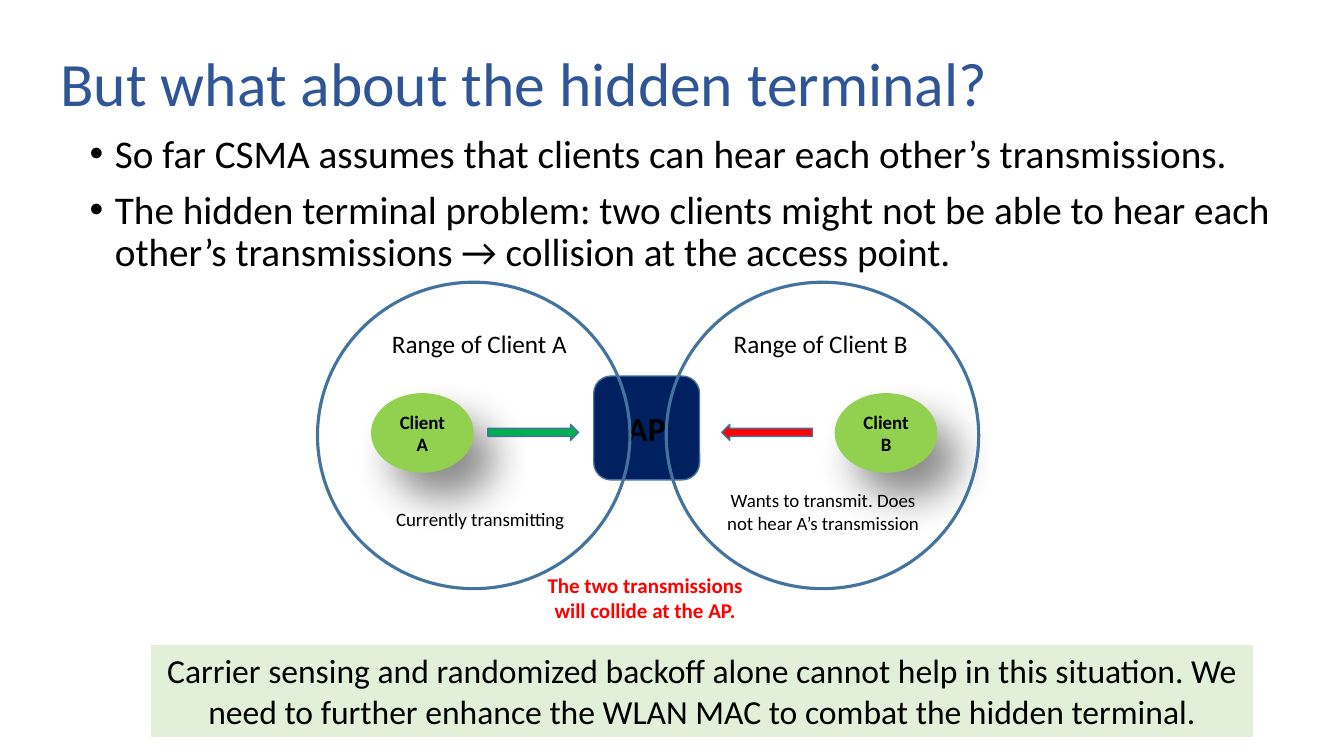
from math import atan2, degrees, hypot

from lxml.etree import SubElement
from pptx import Presentation
from pptx.dml.color import RGBColor
from pptx.enum.shapes import MSO_SHAPE as SHAPE
from pptx.enum.text import MSO_ANCHOR as ANCHOR, MSO_AUTO_SIZE as AUTOSIZE, PP_ALIGN as ALIGN
from pptx.oxml.ns import qn
from pptx.util import Pt

# Content: places are (left, top, width, height) in points
TITLE = "But what about the hidden terminal?"
BULLETS = [
    "So far CSMA assumes that clients can hear each other’s transmissions.",
    "The hidden terminal problem: two clients might not be able to hear each "
    "other’s transmissions → collision at the access point.",
]
CLIENTS = [("Client A", 265), ("Client B", 596.2)]
RANGE_LEFTS = [226.8, 475.9]
ARROWS = [(348.5, "00B050", 0), (515.5, "FF0000", 180)]
LABELS = [
    (["Range of Client A"], (272.9, 231.1, 142.6, 29), 18, "000000", False, ALIGN.LEFT),
    (["Range of Client B"], (517, 231.1, 140.4, 29), 18, "000000", False, ALIGN.LEFT),
    (["Currently transmitting"], (275.8, 359.3, 136.8, 23.8), 13.5, "000000", False, ALIGN.LEFT),
    (["Wants to transmit. Does", "not hear A’s transmission"],
     (511.2, 345.6, 153.4, 40.3), 13.5, "000000", False, ALIGN.CENTER),
    (["The two transmissions", "will collide at the AP."],
     (380.9, 405.4, 159.8, 43.9), 15, "FF0000", True, ALIGN.CENTER),
]
CONCLUSION = ("Carrier sensing and randomized backoff alone cannot help in this situation. "
              "We need to further enhance the WLAN MAC to combat the hidden terminal.")
OUTLINE = "43739E"


def color(value):
    return RGBColor.from_string(value)


def write(frame, lines, size, ink="000000", bold=False, align=ALIGN.CENTER):
    frame.text = "\n".join(lines)
    for paragraph in frame.paragraphs:
        paragraph.alignment = align
        font = paragraph.font
        font.name, font.size, font.bold = "Calibri", Pt(size), bold
        font.color.rgb = color(ink)


def place(shape, box):
    shape.left, shape.top, shape.width, shape.height = map(Pt, box)


def draw(kind, box, fill=None, line=None, weight=1):
    shape = slide.shapes.add_shape(kind, *map(Pt, box))
    shape.shadow.inherit = False
    if fill:
        shape.fill.solid()
        shape.fill.fore_color.rgb = color(fill)
    else:
        shape.fill.background()
    if line:
        shape.line.color.rgb = color(line)
        shape.line.width = Pt(weight)
    else:
        shape.line.fill.background()
    shape.text_frame.word_wrap = True
    shape.text_frame.vertical_anchor = ANCHOR.MIDDLE
    return shape


def cast_shadow(shape, blur=30, right=15, down=18, opacity=45):
    effects = shape._element.spPr.find(qn("a:effectLst"))
    shadow = SubElement(effects, qn("a:outerShdw"), blurRad=str(Pt(blur)),
                        dist=str(Pt(hypot(right, down))),
                        dir=str(round(degrees(atan2(down, right)) * 60000)),
                        algn="ctr", rotWithShape="0")
    black = SubElement(shadow, qn("a:srgbClr"), val="000000")
    SubElement(black, qn("a:alpha"), val=str(opacity * 1000))


deck = Presentation()
deck.slide_width, deck.slide_height = Pt(960), Pt(540)
slide = deck.slides.add_slide(deck.slide_layouts[1])

# Title and bullets
title, body = slide.placeholders
place(title, (36, 9.4, 828, 104.4))
place(body, (56.9, 92.2, 884.2, 342.7))
for holder in (title, body):
    holder.text_frame.auto_size = AUTOSIZE.NONE
title.text_frame.vertical_anchor = ANCHOR.MIDDLE
write(title.text_frame, [TITLE], 44, "2F5597", align=ALIGN.LEFT)
title.text_frame.paragraphs[0].line_spacing = 0.9

write(body.text_frame, BULLETS, 28, align=ALIGN.LEFT)
for number, paragraph in enumerate(body.text_frame.paragraphs):
    paragraph.line_spacing = 0.9
    paragraph.space_before = Pt(10 if number else 0)
    properties = paragraph._p.get_or_add_pPr()
    properties.set("marL", str(Pt(18)))
    properties.set("indent", str(Pt(-18)))

# Access point, clients, ranges and arrows
access_point = draw(SHAPE.ROUNDED_RECTANGLE, (424.1, 268.6, 75.6, 74.2), "002060", OUTLINE)
write(access_point.text_frame, ["AP"], 24, bold=True)
for name, left in CLIENTS:
    client = draw(SHAPE.OVAL, (left, 280.8, 73.4, 56.9), "92D050")
    cast_shadow(client)
    write(client.text_frame, [name], 13.5, bold=True)
for left in RANGE_LEFTS:
    draw(SHAPE.OVAL, (left, 201.6, 223.2, 218.9), line=OUTLINE, weight=2.25)
for left, fill, turn in ARROWS:
    arrow = draw(SHAPE.RIGHT_ARROW, (left, 303.1, 64.8, 11.5), fill, OUTLINE)
    arrow.rotation = turn

# Labels
for lines, box, size, ink, bold, align in LABELS:
    label = slide.shapes.add_textbox(*map(Pt, box)).text_frame
    label.word_wrap = False
    label.auto_size = AUTOSIZE.SHAPE_TO_FIT_TEXT
    write(label, lines, size, ink, bold, align)

# Conclusion
conclusion = draw(SHAPE.RECTANGLE, (108, 460.8, 787, 65.5), "E2F0D9")
conclusion.text_frame.vertical_anchor = ANCHOR.TOP
conclusion.text_frame.auto_size = AUTOSIZE.SHAPE_TO_FIT_TEXT
write(conclusion.text_frame, [CONCLUSION], 24)

deck.save("out.pptx")
